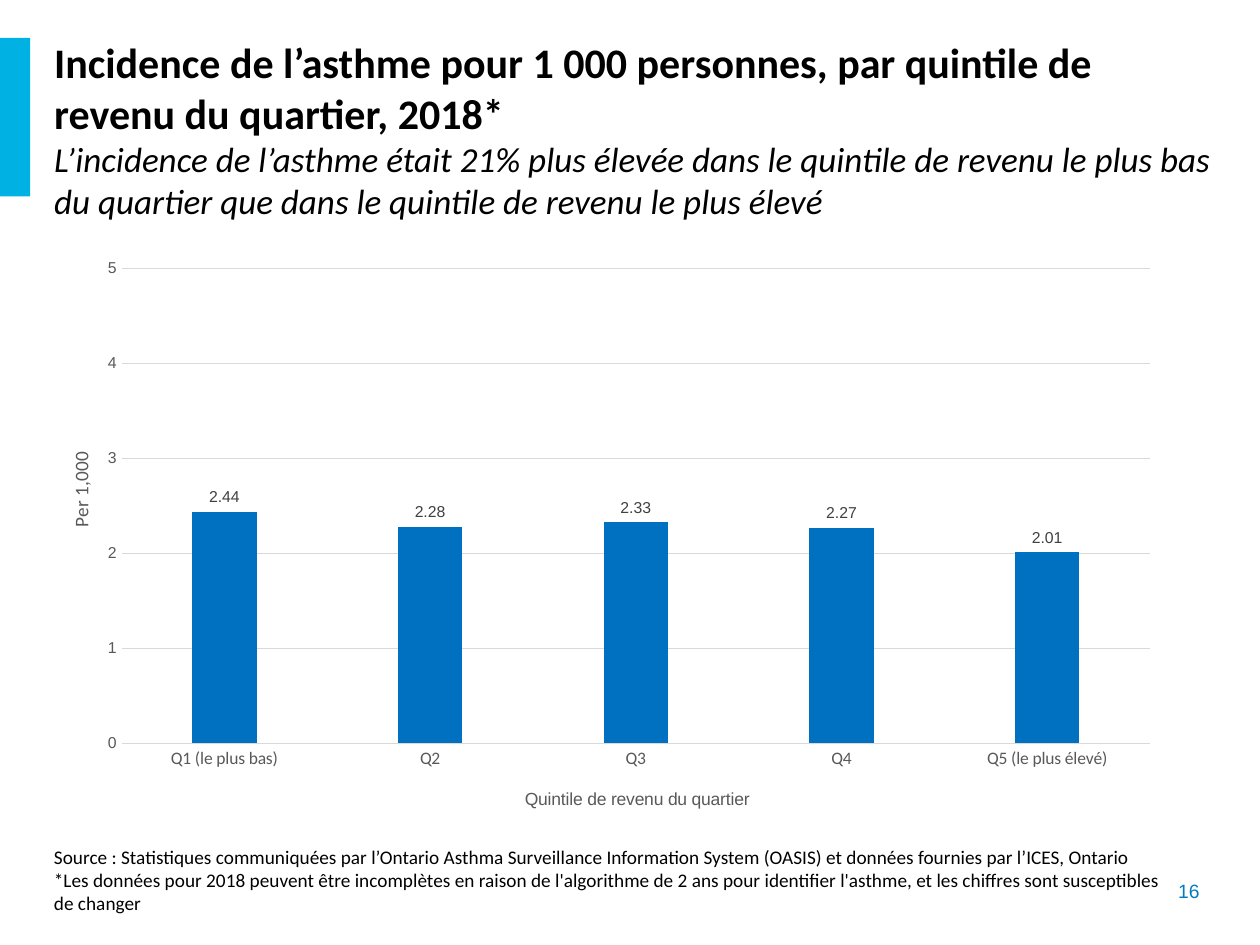
from lxml.etree import SubElement
from pptx import Presentation
from pptx.chart.data import CategoryChartData
from pptx.dml.color import RGBColor
from pptx.enum.chart import XL_CHART_TYPE, XL_LABEL_POSITION, XL_TICK_MARK
from pptx.enum.dml import MSO_LINE
from pptx.enum.shapes import MSO_SHAPE
from pptx.enum.text import MSO_ANCHOR, MSO_AUTO_SIZE, PP_ALIGN
from pptx.oxml.ns import qn
from pptx.util import Inches, Pt

COLORS = {
    "text": "000000",
    "accent": "00B2E3",
    "page": "047BC1",
    "bar": "0070C0",
    "axis": "595959",
    "grid": "D9D9D9",
    "label": "404040",
}
LEFT = 0.33
CONTENT_WIDTH = 9.07

TITLE = "Incidence de l’asthme pour 1 000 personnes, par quintile de revenu du quartier, 2018*"
SUBTITLE = (
    "L’incidence de l’asthme était 21% plus élevée dans le quintile de revenu "
    "le plus bas du quartier que dans le quintile de revenu le plus élevé"
)
NOTES = [
    "Source : Statistiques communiquées par l’Ontario Asthma Surveillance Information "
    "System (OASIS) et données fournies par l’ICES, Ontario",
    "*Les données pour 2018 peuvent être incomplètes en raison de l'algorithme de 2 ans "
    "pour identifier l'asthme, et les chiffres sont susceptibles de changer",
]
INCIDENCE = {
    "Q1 (le plus bas)": 2.44,
    "Q2": 2.28,
    "Q3": 2.33,
    "Q4": 2.27,
    "Q5 (le plus élevé)": 2.01,
}


def color(name):
    return RGBColor.from_string(COLORS[name])


def style_font(font, size, color_name, name="Calibri", bold=False, italic=False):
    font.name = name
    font.size = Pt(size)
    font.bold = bold
    font.italic = italic
    font.color.rgb = color(color_name)


def add_accent_bar(slide):
    shape = slide.shapes.add_shape(
        MSO_SHAPE.RECTANGLE, 0, Inches(0.3), Inches(0.24), Inches(1.26)
    )
    shape.shadow.inherit = False
    shape.fill.solid()
    shape.fill.fore_color.rgb = color("accent")
    shape.line.fill.background()


def set_title(slide):
    title = slide.shapes.title
    title.left, title.top = Inches(LEFT), Inches(0.28)
    title.width, title.height = Inches(9.45), Inches(1.49)
    frame = title.text_frame
    frame.auto_size = MSO_AUTO_SIZE.NONE
    frame.word_wrap = True
    frame.vertical_anchor = MSO_ANCHOR.MIDDLE
    paragraph = frame.paragraphs[0]
    paragraph.alignment = PP_ALIGN.LEFT
    heading = paragraph.add_run()
    heading.text = TITLE
    style_font(heading.font, 24, "text", bold=True)
    paragraph.add_line_break()
    message = paragraph.add_run()
    message.text = SUBTITLE
    style_font(message.font, 20, "text", italic=True)


def add_text(slide, box, lines, color_name, font_name, alignment=PP_ALIGN.LEFT):
    shape = slide.shapes.add_textbox(*map(Inches, box))
    frame = shape.text_frame
    frame.word_wrap = True
    frame.text = "\n".join(lines)
    for paragraph in frame.paragraphs:
        paragraph.alignment = alignment
        style_font(paragraph.font, 11, color_name, font_name)


def fill_layout(layout, **values):
    """Place a chart part by fractions of the chart area."""
    manual = SubElement(layout, qn("c:manualLayout"))
    for tag, value in values.items():
        SubElement(manual, qn(f"c:{tag}")).set("val", str(value))


def place_plot(chart):
    plot_area = chart._chartSpace.chart.plotArea
    for layout in plot_area.findall(qn("c:layout")):
        plot_area.remove(layout)
    layout = SubElement(plot_area, qn("c:layout"))
    plot_area.insert(0, layout)
    fill_layout(
        layout, layoutTarget="inner", xMode="edge", yMode="edge",
        x=0.07, y=0.05, w=0.9, h=0.82,
    )


def style_axis(axis, title, title_size, title_font, label_size, label_font, x, y):
    axis.major_tick_mark = axis.minor_tick_mark = XL_TICK_MARK.NONE
    style_font(axis.tick_labels.font, label_size, "axis", label_font)
    frame = axis.axis_title.text_frame
    frame.text = title
    style_font(frame.paragraphs[0].font, title_size, "axis", title_font)
    element = axis.axis_title._element
    layout = element.find(qn("c:layout"))
    if layout is None:
        layout = SubElement(element, qn("c:layout"))
        element.find(qn("c:tx")).addnext(layout)
    fill_layout(layout, xMode="edge", yMode="edge", x=x, y=y)


def style_line(line):
    line.color.rgb = color("grid")
    line.width = Pt(0.75)
    line.dash_style = MSO_LINE.SOLID


def add_incidence_chart(slide):
    data = CategoryChartData()
    data.categories = list(INCIDENCE)
    data.add_series("Incidence", list(INCIDENCE.values()))
    chart = slide.shapes.add_chart(
        XL_CHART_TYPE.COLUMN_CLUSTERED, Inches(LEFT), Inches(1.9),
        Inches(CONTENT_WIDTH), Inches(4.6), data,
    ).chart
    chart.has_legend = False
    chart.has_title = False
    style_font(chart.font, 10, "text", "Arial")
    place_plot(chart)

    # Axes
    category_axis, value_axis = chart.category_axis, chart.value_axis
    style_axis(category_axis, "Quintile de revenu du quartier",
               10, "Arial", 10, "Calibri", 0.42, 0.94)
    style_line(category_axis.format.line)
    style_axis(value_axis, "Per 1,000", 11, "Calibri", 9, "Arial", 0.02, 0.36)
    value_axis.format.line.fill.background()
    value_axis.minimum_scale = 0
    value_axis.maximum_scale = 5
    value_axis.major_unit = 1
    style_line(value_axis.major_gridlines.format.line)

    # Columns and their values
    plot = chart.plots[0]
    plot.vary_by_categories = False
    plot.gap_width = 219
    plot.overlap = -27
    fill = plot.series[0].format.fill
    fill.solid()
    fill.fore_color.rgb = color("bar")
    plot.has_data_labels = True
    labels = plot.data_labels
    labels.show_value = True
    labels.position = XL_LABEL_POSITION.OUTSIDE_END
    style_font(labels.font, 9, "label", "Arial")


def main():
    presentation = Presentation()
    presentation.slide_width, presentation.slide_height = Inches(10), Inches(7.5)
    slide = presentation.slides.add_slide(presentation.slide_layouts[5])
    add_accent_bar(slide)
    set_title(slide)
    add_incidence_chart(slide)
    # Source notes and page number
    add_text(slide, (LEFT, 6.66, CONTENT_WIDTH, 0.84), NOTES, "text", "Calibri")
    add_text(slide, (8.45, 6.93, 1.17, 0.29), ["16"], "page", "Arial", PP_ALIGN.RIGHT)
    presentation.save("out.pptx")


if __name__ == "__main__":
    main()
